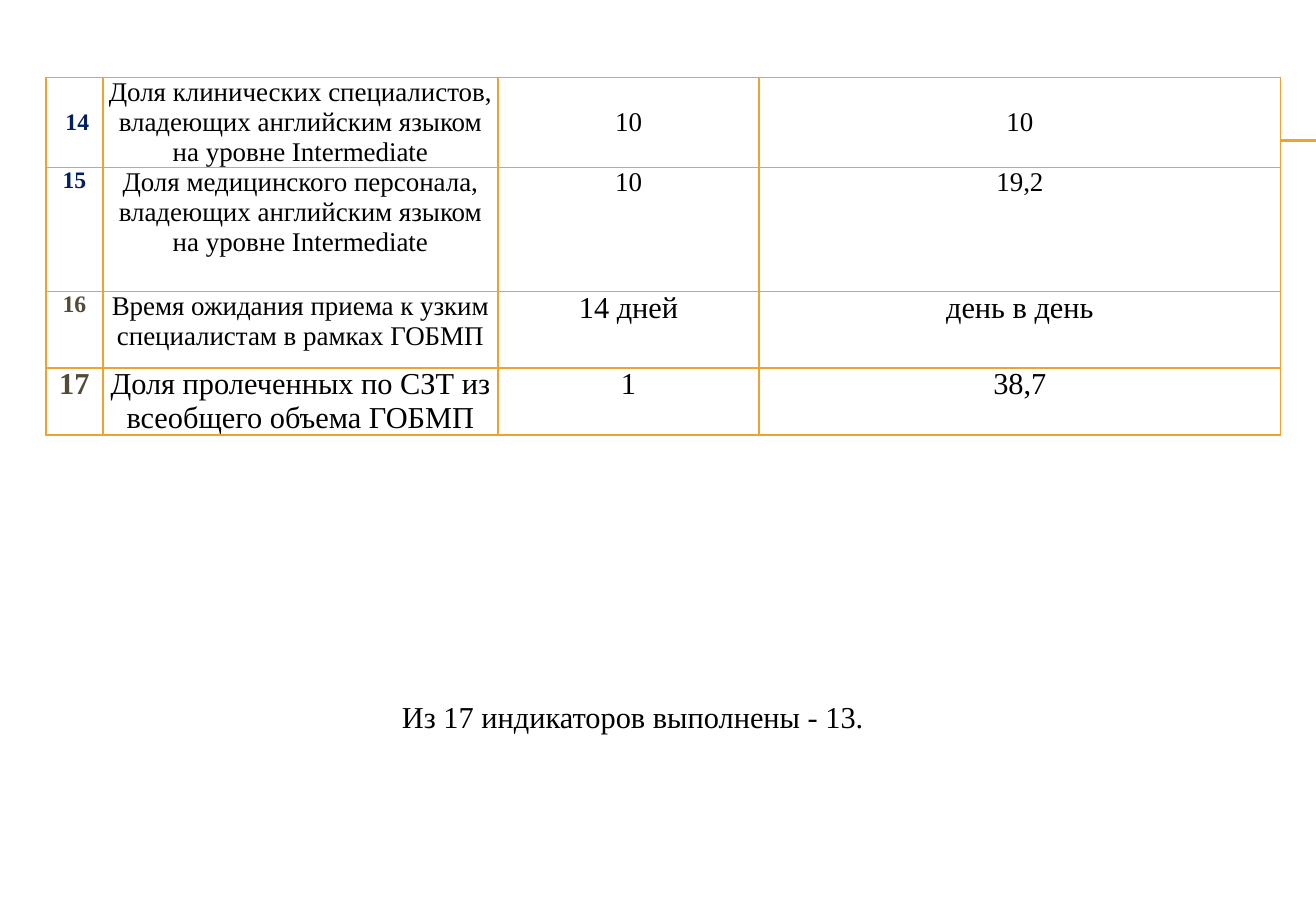
from typing import NamedTuple

from lxml.etree import SubElement
from pptx import Presentation
from pptx.dml.color import RGBColor
from pptx.enum.shapes import MSO_CONNECTOR
from pptx.enum.text import MSO_ANCHOR, PP_ALIGN
from pptx.oxml.ns import qn
from pptx.util import Cm, Pt

FONT = "Times New Roman"
COLORS = {
    "accent": "F0A22E",
    "white": "FFFFFF",
    "black": "000000",
    "navy": "002060",
    "brown": "534B38",
}
PAGE_WIDTH, PAGE_HEIGHT = 27.51, 19.05
COLUMN_WIDTHS = (1.19, 8.26, 5.46, 10.9)


class Indicator(NamedTuple):
    number: str
    name: str
    plan: str
    actual: str
    height: float
    number_color: str
    number_size: int = 14
    name_size: int = 16
    value_size: int = 16
    anchor: MSO_ANCHOR = MSO_ANCHOR.TOP
    number_indent: float = 0


INDICATORS = (
    Indicator("14", "Доля клинических специалистов, владеющих английским языком на уровне Intermediate",
              "10", "10", 1.88, "navy", anchor=MSO_ANCHOR.MIDDLE, number_indent=0.12),
    Indicator("15", "Доля медицинского персонала, владеющих английским языком на уровне Intermediate",
              "10", "19,2", 2.59, "navy"),
    Indicator("16", "Время ожидания приема к узким специалистам в рамках ГОБМП",
              "14 дней", "день в день", 1.6, "brown", value_size=18),
    Indicator("17", "Доля пролеченных по СЗТ из всеобщего объема ГОБМП",
              "1", "38,7", 1.4, "brown", 18, 18, 18),
)


def rgb(name: str) -> RGBColor:
    return RGBColor.from_string(COLORS[name])


def write(frame, text: str, size: int, color: str = "black", bold: bool = False) -> None:
    paragraph = frame.paragraphs[0]
    paragraph.text = text
    paragraph.alignment = PP_ALIGN.CENTER
    font = paragraph.font
    font.name, font.size, font.bold = FONT, Pt(size), bold
    font.color.rgb = rgb(color)


def draw_rule(page, top: float) -> None:
    rule = page.shapes.add_connector(
        MSO_CONNECTOR.STRAIGHT, Cm(1.55), Cm(top), Cm(PAGE_WIDTH), Cm(top))
    rule.line.color.rgb = rgb("accent")
    rule.line.width = Pt(0.75)
    SubElement(rule._element.spPr, qn("a:effectLst"))


def style_cell(cell, anchor: MSO_ANCHOR, indent: float) -> None:
    cell.margin_left = Cm(indent)
    cell.margin_right = cell.margin_top = cell.margin_bottom = 0
    cell.vertical_anchor = anchor
    properties = cell._tc.get_or_add_tcPr()
    for side in ("lnL", "lnR", "lnT", "lnB"):
        border = SubElement(properties, qn(f"a:{side}"), w=str(Pt(1)))
        fill = SubElement(border, qn("a:solidFill"))
        SubElement(fill, qn("a:srgbClr"), val=COLORS["accent"])
    cell.fill.solid()
    cell.fill.fore_color.rgb = rgb("white")


def draw_table(page) -> None:
    table = page.shapes.add_table(
        len(INDICATORS), len(COLUMN_WIDTHS), Cm(0.96), Cm(1.62),
        Cm(sum(COLUMN_WIDTHS)), Cm(sum(item.height for item in INDICATORS))).table
    table.first_row = table.horz_banding = False
    for column, width in zip(table.columns, COLUMN_WIDTHS):
        column.width = Cm(width)
    for row, item in zip(table.rows, INDICATORS):
        row.height = Cm(item.height)
        number, name, plan, actual = row.cells
        for cell in (number, name, plan, actual):
            style_cell(cell, item.anchor, item.number_indent if cell is number else 0)
        write(number.text_frame, item.number, item.number_size, item.number_color, True)
        write(name.text_frame, item.name, item.name_size)
        write(plan.text_frame, item.plan, item.value_size)
        write(actual.text_frame, item.actual, item.value_size)


def draw_summary(page) -> None:
    box = page.shapes.add_textbox(Cm(2.95), Cm(14.48), Cm(21.2), Cm(1.02))
    frame = box.text_frame
    frame.word_wrap = True
    frame.margin_right = Cm(0.89)
    write(frame, "Из 17 индикаторов выполнены - 13.", 18)


def main() -> None:
    deck = Presentation()
    deck.slide_width, deck.slide_height = Cm(PAGE_WIDTH), Cm(PAGE_HEIGHT)
    page = deck.slides.add_slide(deck.slide_layouts[6])

    # Double rule behind the table
    for top in (2.92, 2.95):
        draw_rule(page, top)

    # Indicators and conclusion
    draw_table(page)
    draw_summary(page)
    deck.save("out.pptx")


if __name__ == "__main__":
    main()
